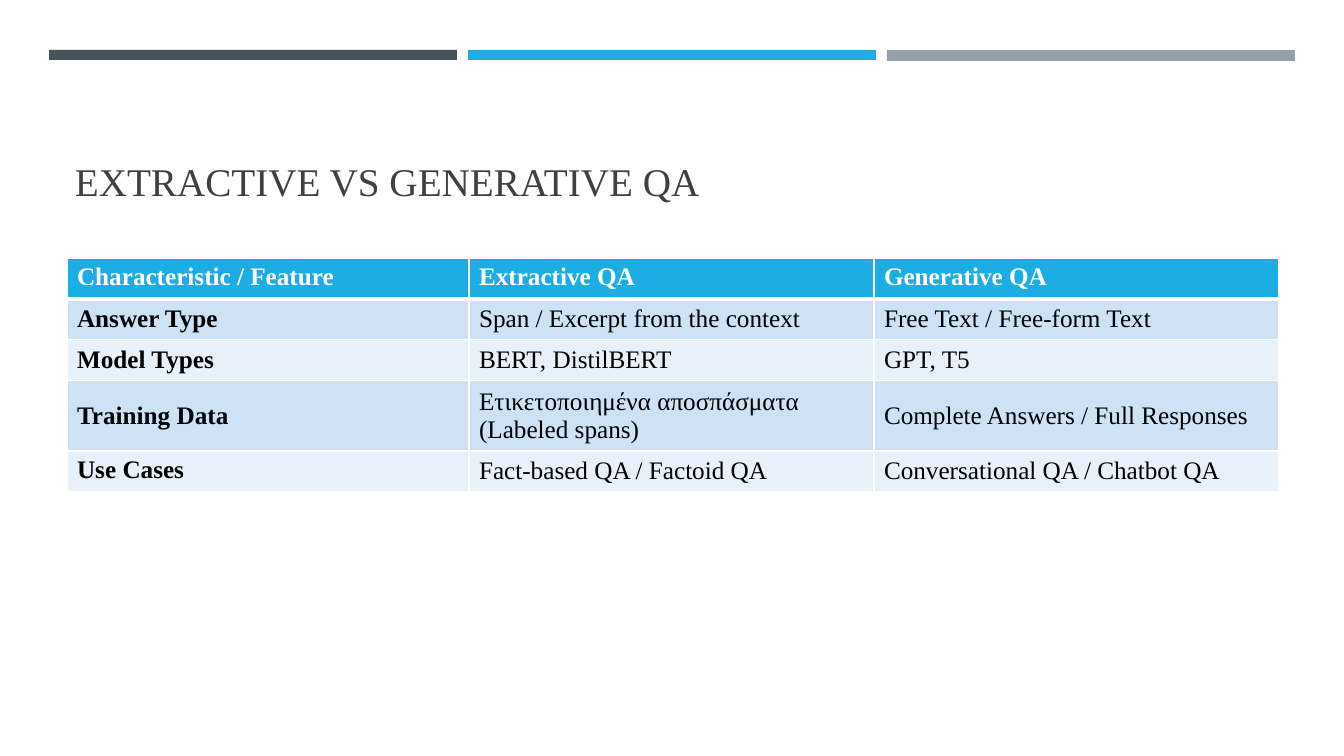
from lxml.etree import SubElement
from pptx import Presentation
from pptx.dml.color import RGBColor
from pptx.enum.shapes import MSO_SHAPE
from pptx.enum.text import MSO_ANCHOR
from pptx.oxml.ns import qn
from pptx.util import Emu, Pt

SCALE = 914400 / 100.8


def px(n):
    return Emu(round(n * SCALE))


def color(code):
    return RGBColor.from_string(code)


class Deck:
    font = "Times New Roman"
    white, black, grey = "FFFFFF", "000000", "404040"
    head, bands = "1CADE4", ("CDE3F5", "E8F1FA")

    def __init__(self):
        self.prs = Presentation()
        self.prs.slide_width, self.prs.slide_height = px(1344), px(756)
        self.slide = self.prs.slides.add_slide(self.prs.slide_layouts[6])

    def bar(self, x, y, w, h, fill):
        shape = self.slide.shapes.add_shape(
            MSO_SHAPE.RECTANGLE, px(x), px(y), px(w), px(h))
        shape.shadow.inherit = False
        shape.fill.solid()
        shape.fill.fore_color.rgb = color(fill)
        shape.line.fill.background()

    def label(self, frame, text, size, ink, bold=False):
        run = frame.paragraphs[0].add_run()
        run.text = text
        run.font.name = self.font
        run.font.size = Pt(size)
        run.font.bold = bold
        run.font.color.rgb = color(ink)

    def title(self, x, y, w, h, text):
        frame = self.slide.shapes.add_textbox(px(x), px(y), px(w), px(h)).text_frame
        frame.word_wrap = True
        frame.vertical_anchor = MSO_ANCHOR.BOTTOM
        self.label(frame, text, 28, self.grey)

    def edges(self, cell, widths):
        props = cell._tc.get_or_add_tcPr()
        for spot, (side, width) in enumerate(widths.items()):
            line = SubElement(props, qn("a:ln" + side), w=str(Pt(width)))
            fill = SubElement(line, qn("a:solidFill"))
            SubElement(fill, qn("a:srgbClr"), val=self.white)
            props.insert(spot, line)  # borders come before the fill

    def table(self, x, y, cols, highs, rows):
        grid = self.slide.shapes.add_table(
            len(rows), len(cols), px(x), px(y), px(sum(cols)), px(sum(highs))).table
        for col, width in zip(grid.columns, cols):
            col.width = px(width)
        for r, (row, high) in enumerate(zip(rows, highs)):
            grid.rows[r].height = px(high)
            for c, text in enumerate(row):
                cell = grid.cell(r, c)
                cell.fill.solid()
                cell.fill.fore_color.rgb = color(
                    self.bands[(r - 1) % 2] if r else self.head)
                top = r == 0 or (r == len(rows) - 1 and c == 0)
                cell.vertical_anchor = MSO_ANCHOR.TOP if top else MSO_ANCHOR.MIDDLE
                self.edges(cell, {"L": 1, "R": 1, "T": 3 if r == 1 else 1,
                                  "B": 1 if r else 3})
                self.label(cell.text_frame, text, 18,
                           self.black if r else self.white, r == 0 or c == 0)


def main():
    deck = Deck()

    # Bars across the top
    for i, fill in enumerate(("465359", "1CADE4", "969FA7")):
        deck.bar(49 + 419 * i, 50, 408, 11 if i == 2 else 10, fill)

    # Title
    deck.title(65, 78, 1215, 131, "EXTRACTIVE VS GENERATIVE QA")

    # Comparison table
    deck.table(67, 258, (402, 405, 405), (41, 40, 41, 66, 41), (
        ("Characteristic / Feature", "Extractive QA", "Generative QA"),
        ("Answer Type", "Span / Excerpt from the context",
         "Free Text / Free-form Text"),
        ("Model Types", "BERT, DistilBERT", "GPT, T5"),
        ("Training Data", "Ετικετοποιημένα αποσπάσματα (Labeled spans)",
         "Complete Answers / Full Responses"),
        ("Use Cases", "Fact-based QA / Factoid QA",
         "Conversational QA / Chatbot QA"),
    ))
    deck.prs.save("out.pptx")


if __name__ == "__main__":
    main()
